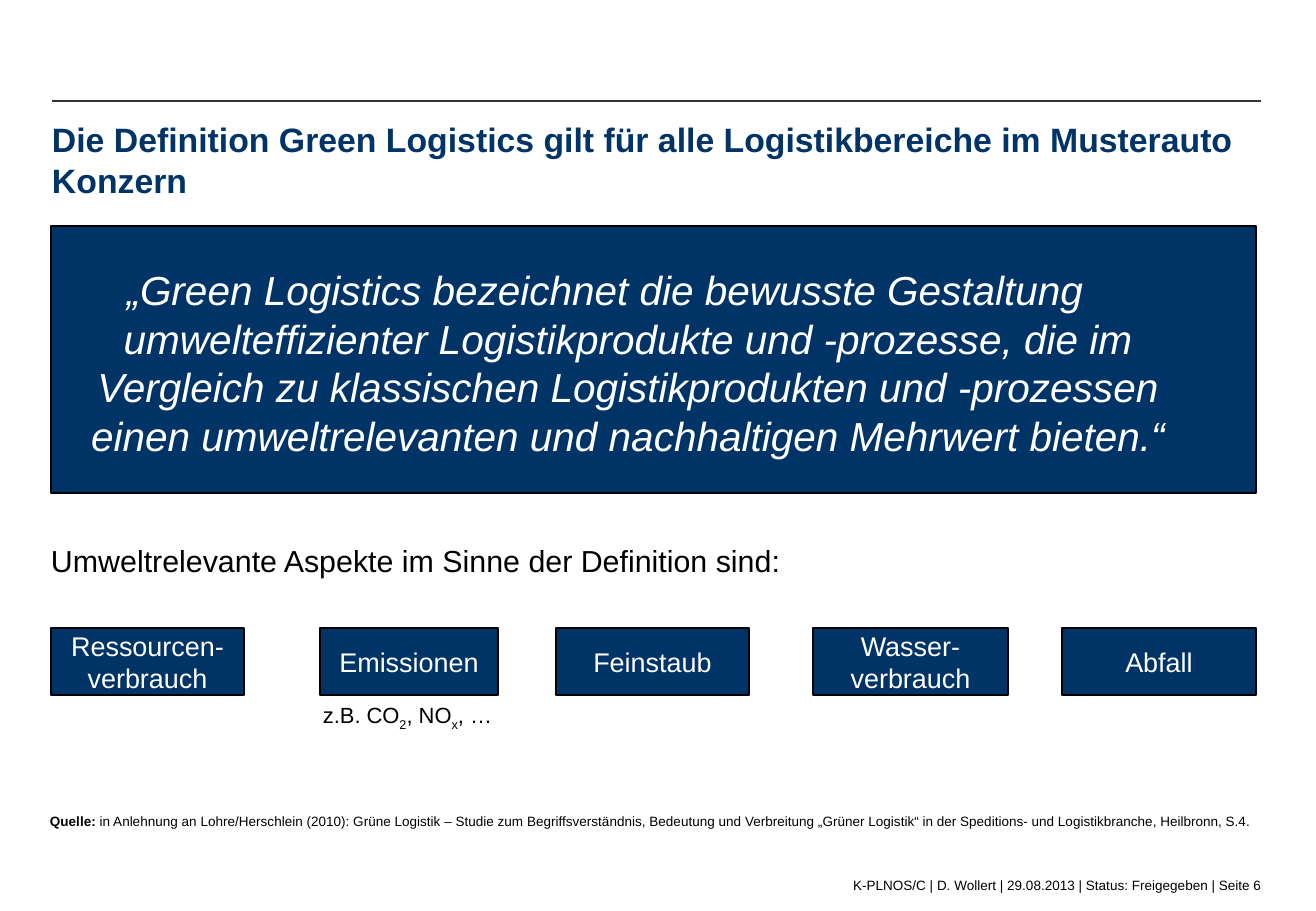
from dataclasses import dataclass

from lxml.etree import SubElement
from pptx import Presentation
from pptx.dml.color import RGBColor
from pptx.enum.shapes import MSO_CONNECTOR as Connector, MSO_SHAPE as Shape
from pptx.enum.text import MSO_ANCHOR as Anchor, PP_ALIGN as Align
from pptx.oxml.ns import qn
from pptx.util import Pt

PX = 7526


@dataclass(frozen=True)
class Theme:
    """Colours, type sizes and line width of the slide."""
    font: str = "Arial"
    navy: RGBColor = RGBColor(0x00, 0x33, 0x66)
    black: RGBColor = RGBColor(0x00, 0x00, 0x00)
    white: RGBColor = RGBColor(0xFF, 0xFF, 0xFF)
    grey: RGBColor = RGBColor(0x33, 0x33, 0x33)
    title: int = 20
    quote: int = 24
    intro: int = 18
    aspect: int = 16
    example: int = 13
    small: int = 8
    line: float = 0.75


THEME = Theme()
ASPECT_TOP, ASPECT_HEIGHT = 628, 67
ASPECTS = [
    (51, 193, "Ressourcen-\nverbrauch"),
    (320, 178, "Emissionen"),
    (556, 193, "Feinstaub"),
    (813, 195, "Wasser-\nverbrauch"),
    (1062, 194, "Abfall"),
]
QUOTE = (
    "„Green Logistics bezeichnet die bewusste Gestaltung umwelteffizienter "
    "Logistikprodukte und -prozesse, die im Vergleich zu klassischen "
    "Logistikprodukten und -prozessen einen umweltrelevanten und nachhaltigen "
    "Mehrwert bieten.“"
)
SOURCE = (
    "in Anlehnung an Lohre/Herschlein (2010): Grüne Logistik – Studie zum "
    "Begriffsverständnis, Bedeutung und Verbreitung „Grüner Logistik“ in der "
    "Speditions- und Logistikbranche, Heilbronn, S.4."
)


def emu(*lengths):
    """Turn lengths in px into EMU."""
    return [length * PX for length in lengths]


def prepare(frame, align, wrap=True, anchor=Anchor.TOP):
    """Clear the margins of a text frame and return its first paragraph."""
    frame.margin_left = frame.margin_top = 0
    frame.margin_right = frame.margin_bottom = 0
    frame.word_wrap = wrap
    frame.vertical_anchor = anchor
    paragraph = frame.paragraphs[0]
    paragraph.alignment = align
    return paragraph


def add_run(paragraph, text, size, color, bold=False, italic=False, baseline=0):
    """Add one formatted run, lowered when a negative baseline is given."""
    run = paragraph.add_run()
    run.text = text
    font = run.font
    font.name, font.size, font.bold, font.italic = THEME.font, Pt(size), bold, italic
    font.color.rgb = color
    if baseline:
        run._r.get_or_add_rPr().set("baseline", str(baseline * 1000))


def add_text(slide, box, align=Align.LEFT, hanging=0):
    """Add a text box and return its paragraph, with a hanging indent if given."""
    paragraph = prepare(slide.shapes.add_textbox(*emu(*box)).text_frame, align)
    if hanging:
        properties = paragraph._p.get_or_add_pPr()
        properties.set("marL", str(hanging * PX))
        properties.set("indent", str(-hanging * PX))
    return paragraph


def add_panel(slide, box):
    """Add a navy rectangle with a thin black outline."""
    panel = slide.shapes.add_shape(Shape.RECTANGLE, *emu(*box))
    panel.shadow.inherit = False
    panel.fill.solid()
    panel.fill.fore_color.rgb = THEME.navy
    panel.line.color.rgb = THEME.black
    panel.line.width = Pt(THEME.line)
    return panel


def add_aspect(slide, left, width, label):
    """Add one labelled box of the aspect row."""
    panel = add_panel(slide, (left, ASPECT_TOP, width, ASPECT_HEIGHT))
    paragraph = prepare(panel.text_frame, Align.CENTER, False, Anchor.MIDDLE)
    for index, part in enumerate(label.split("\n")):
        if index:
            paragraph.add_line_break()
        add_run(paragraph, part, THEME.aspect, THEME.white)


def add_rule(slide, left, right, top):
    """Add the horizontal rule above the title."""
    rule = slide.shapes.add_connector(Connector.STRAIGHT, *emu(left, top, right, top))
    rule.line.color.rgb = THEME.grey
    rule.line.width = Pt(THEME.line)
    SubElement(rule._element.spPr, qn("a:effectLst"))


def set_title(slide, box, text):
    """Place and format the title."""
    title = slide.shapes.title
    title.left, title.top, title.width, title.height = emu(*box)
    paragraph = prepare(title.text_frame, Align.LEFT)
    add_run(paragraph, text, THEME.title, THEME.navy, bold=True)


def main():
    """Build the slide and save it."""
    deck = Presentation()
    deck.slide_width, deck.slide_height = emu(1316, 911)
    slide = deck.slides.add_slide(deck.slide_layouts[5])

    add_rule(slide, 52, 1261, 101)
    set_title(slide, (52, 119, 1210, 91),
              "Die Definition Green Logistics gilt für alle "
              "Logistikbereiche im Musterauto Konzern")

    add_panel(slide, (51, 226, 1205, 267))
    quote = add_text(slide, (0, 265, 1210, 146), Align.CENTER, hanging=46)
    add_run(quote, QUOTE, THEME.quote, THEME.white, italic=True)

    intro = add_text(slide, (51, 542, 745, 36))
    add_run(intro, "Umweltrelevante Aspekte im Sinne der Definition sind:",
            THEME.intro, THEME.black)
    for left, width, label in ASPECTS:
        add_aspect(slide, left, width, label)

    example = add_text(slide, (323, 702, 179, 27))
    for text, baseline in [("z.B. CO", 0), ("2", -25), (", NO", 0), ("x", -25), (", …", 0)]:
        add_run(example, text, THEME.example, THEME.black, baseline=baseline)

    source = add_text(slide, (50, 813, 1224, 16), hanging=83)
    add_run(source, "Quelle: ", THEME.small, THEME.black, bold=True)
    add_run(source, SOURCE, THEME.small, THEME.black)

    footer = add_text(slide, (649, 877, 613, 26), Align.RIGHT)
    add_run(footer, "K-PLNOS/C | D. Wollert | 29.08.2013 | Status: Freigegeben | Seite 6",
            THEME.small, THEME.black)

    deck.save("out.pptx")


if __name__ == "__main__":
    main()
